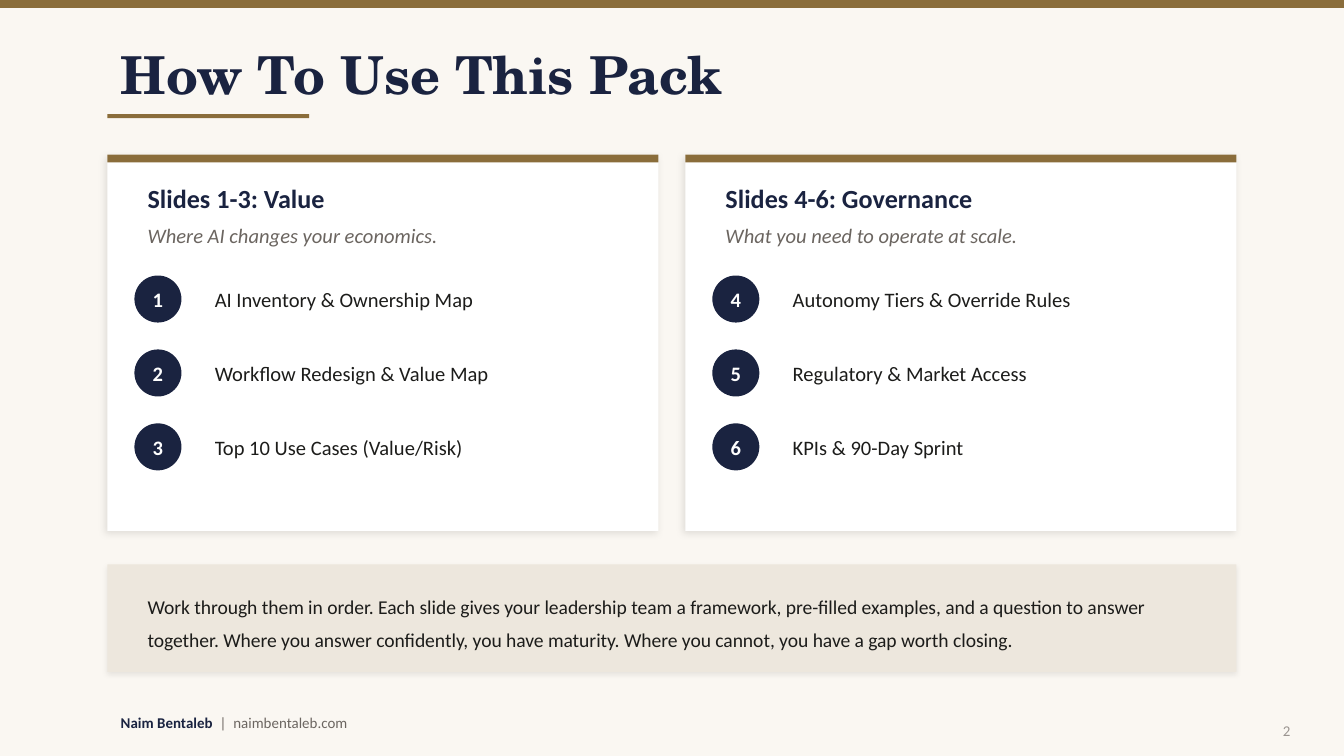
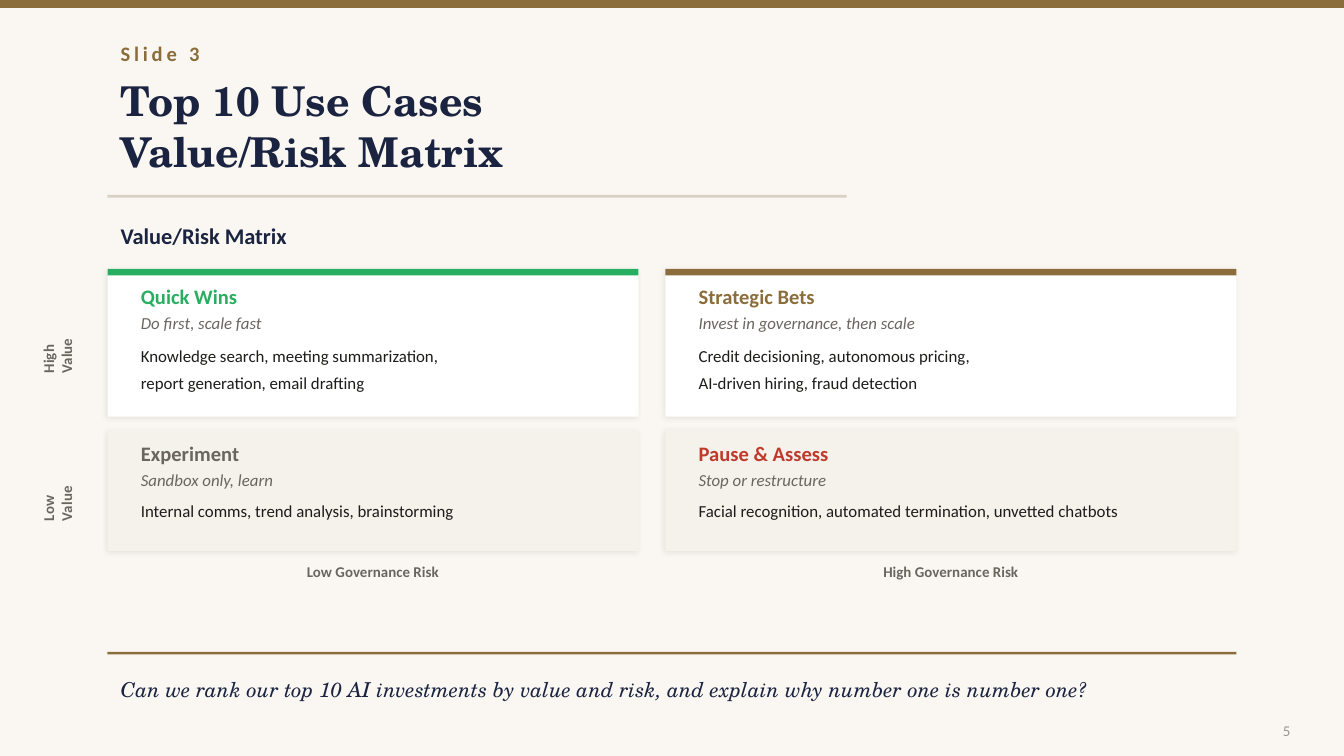
import dataclasses
import typing

import lxml.etree
import pptx
import pptx.dml.color
import pptx.enum.shapes
import pptx.enum.text
import pptx.oxml.ns
import pptx.util

Inches = pptx.util.Inches
SHAPES = pptx.enum.shapes.MSO_SHAPE
ALIGN = pptx.enum.text.PP_ALIGN
ANCHOR = pptx.enum.text.MSO_ANCHOR

COLORS = {
    "paper": "FAF7F2",
    "gold": "8A6D3B",
    "navy": "1A2340",
    "white": "FFFFFF",
    "ink": "1C1C1A",
    "gray": "6B6560",
    "pale_gray": "9A9490",
    "rule": "D8D0C4",
    "sand": "EDE7DD",
    "cream": "F5F1EB",
    "green": "27AE60",
    "red": "C0392B",
    "black": "000000",
}
SANS, SERIF = "Calibri", "TeX Gyre Schola"
MARGIN, CONTENT_WIDTH, GUTTER = 0.8, 8.4, 0.2


class Frame(typing.NamedTuple):
    left: float
    top: float
    width: float
    height: float

    def lengths(self) -> list:
        return [Inches(value) for value in self]


class Shadow(typing.NamedTuple):
    opacity: int
    blur: int
    distance: int


DEEP_SHADOW = Shadow(10, 4, 2)
SOFT_SHADOW = Shadow(8, 3, 1)


@dataclasses.dataclass
class Section:
    title: str
    subtitle: str
    first_number: int
    topics: list[str]


@dataclasses.dataclass
class Quadrant:
    title: str
    subtitle: str
    examples: str
    color: str
    column: int
    row: int


class MatrixColumn(typing.NamedTuple):
    left: float
    width: float
    label: str


class MatrixRow(typing.NamedTuple):
    top: float
    height: float
    fill: str
    has_band: bool
    title_offset: float
    subtitle_offset: float
    examples_offset: float
    examples_height: float
    line_spacing: float | None
    label: str
    label_top: float


SECTIONS = [
    Section("Slides 1-3: Value", "Where AI changes your economics.", 1,
            ["AI Inventory & Ownership Map", "Workflow Redesign & Value Map",
             "Top 10 Use Cases (Value/Risk)"]),
    Section("Slides 4-6: Governance", "What you need to operate at scale.", 4,
            ["Autonomy Tiers & Override Rules", "Regulatory & Market Access",
             "KPIs & 90-Day Sprint"]),
]
MATRIX_COLUMNS = [
    MatrixColumn(MARGIN, 3.95, "Low Governance Risk"),
    MatrixColumn(4.95, 4.25, "High Governance Risk"),
]
MATRIX_ROWS = [
    MatrixRow(2, 1.1, "white", True, 0.08, 0.3, 0.5, 0.45, 1.3, "High Value", 2.25),
    MatrixRow(3.2, 0.9, "cream", False, 0.05, 0.27, 0.45, 0.3, None, "Low Value", 3.35),
]
QUADRANTS = [
    Quadrant("Quick Wins", "Do first, scale fast",
             "Knowledge search, meeting summarization,\nreport generation, email drafting",
             "green", 0, 0),
    Quadrant("Strategic Bets", "Invest in governance, then scale",
             "Credit decisioning, autonomous pricing,\nAI-driven hiring, fraud detection",
             "gold", 1, 0),
    Quadrant("Experiment", "Sandbox only, learn",
             "Internal comms, trend analysis, brainstorming", "gray", 0, 1),
    Quadrant("Pause & Assess", "Stop or restructure",
             "Facial recognition, automated termination, unvetted chatbots", "red", 1, 1),
]


# Drawing helpers
def rgb(color: str) -> pptx.dml.color.RGBColor:
    return pptx.dml.color.RGBColor.from_string(COLORS[color])


def add_span(paragraph, text: str, *, size: float = 11, color: str = "ink",
             font: str = SANS, bold: bool = False, italic: bool = False,
             tracking: float = 0) -> None:
    span = paragraph.add_run()
    span.text = text
    span.font.name = font
    span.font.size = pptx.util.Pt(size)
    span.font.bold = bold
    span.font.italic = italic
    span.font.color.rgb = rgb(color)
    if tracking:
        span._r.get_or_add_rPr().set("spc", str(int(tracking * 100)))


def fill_text(box, text: str, *, align=ALIGN.LEFT, anchor=ANCHOR.MIDDLE,
              line_spacing: float | None = None, **style) -> None:
    text_frame = box.text_frame
    text_frame.word_wrap = True
    text_frame.vertical_anchor = anchor
    for index, line in enumerate(text.split("\n")):
        paragraph = text_frame.add_paragraph() if index else text_frame.paragraphs[0]
        paragraph.alignment = align
        if line_spacing:
            paragraph.line_spacing = line_spacing
        add_span(paragraph, line, **style)


def add_text(page, frame: Frame, text: str, *, rotation: float = 0, **style):
    box = page.shapes.add_textbox(*frame.lengths())
    box.rotation = rotation
    fill_text(box, text, **style)
    return box


def add_block(page, frame: Frame, color: str, *, kind=SHAPES.RECTANGLE,
              shadow: Shadow | None = None):
    block = page.shapes.add_shape(kind, *frame.lengths())
    block.fill.solid()
    block.fill.fore_color.rgb = rgb(color)
    block.line.fill.background()
    block.shadow.inherit = False
    if shadow:
        qn = pptx.oxml.ns.qn
        effects = block._element.spPr.find(qn("a:effectLst"))
        outer = lxml.etree.SubElement(
            effects, qn("a:outerShdw"), blurRad=str(pptx.util.Pt(shadow.blur)),
            dist=str(pptx.util.Pt(shadow.distance)), dir=str(135 * 60000),
            algn="bl", rotWithShape="0")
        tint = lxml.etree.SubElement(outer, qn("a:srgbClr"), val=COLORS["black"])
        lxml.etree.SubElement(tint, qn("a:alpha"), val=str(shadow.opacity * 1000))
    return block


def add_page(deck, number: int):
    page = deck.slides.add_slide(deck.slide_layouts[6])
    page.background.fill.solid()
    page.background.fill.fore_color.rgb = rgb("paper")
    add_block(page, Frame(0, 0, 10, 0.06), "gold")
    add_text(page, Frame(9.2, 5.25, 0.5, 0.3), str(number), size=8,
             color="pale_gray", align=ALIGN.RIGHT, anchor=ANCHOR.BOTTOM)
    return page


def add_title(page, frame: Frame, text: str, **style) -> None:
    add_text(page, frame, text, font=SERIF, color="navy", bold=True, **style)


# Section cards with numbered topics
def add_section(page, section: Section, left: float, width: float) -> None:
    top, inner = 1.15, left + 0.2
    add_block(page, Frame(left, top, width, 2.8), "white", shadow=DEEP_SHADOW)
    add_block(page, Frame(left, top, width, 0.06), "gold")
    add_text(page, Frame(inner, 1.3, width - 0.4, 0.35), section.title,
             size=14, color="navy", bold=True)
    add_text(page, Frame(inner, 1.6, width - 0.4, 0.3), section.subtitle,
             color="gray", italic=True)
    for index, topic in enumerate(section.topics):
        topic_top = 2.05 + index * 0.55
        badge = add_block(page, Frame(inner, topic_top, 0.35, 0.35), "navy",
                          kind=SHAPES.OVAL)
        badge_text = badge.text_frame
        badge_text.margin_left = badge_text.margin_right = 0
        badge_text.margin_top = badge_text.margin_bottom = 0
        fill_text(badge, str(section.first_number + index), color="white",
                  bold=True, align=ALIGN.CENTER)
        add_text(page, Frame(inner + 0.5, topic_top, 3.2, 0.35), topic)


# Matrix quadrants
def add_quadrant(page, quadrant: Quadrant) -> None:
    column, row = MATRIX_COLUMNS[quadrant.column], MATRIX_ROWS[quadrant.row]
    add_block(page, Frame(column.left, row.top, column.width, row.height),
              row.fill, shadow=SOFT_SHADOW)
    if row.has_band:
        add_block(page, Frame(column.left, row.top, column.width, 0.05), quadrant.color)
    left, width = column.left + 0.15, column.width - 0.35
    add_text(page, Frame(left, row.top + row.title_offset, 2.5, 0.25),
             quadrant.title, color=quadrant.color, bold=True)
    add_text(page, Frame(left, row.top + row.subtitle_offset, width, 0.2),
             quadrant.subtitle, size=9, color="gray", italic=True)
    add_text(page, Frame(left, row.top + row.examples_offset, width, row.examples_height),
             quadrant.examples, size=9, line_spacing=row.line_spacing)


def build_guide(deck) -> None:
    page = add_page(deck, 2)
    add_title(page, Frame(MARGIN, 0.25, 8, 0.6), "How To Use This Pack", size=28)
    add_block(page, Frame(MARGIN, 0.85, 1.5, 0.03), "gold")

    card_width = (CONTENT_WIDTH - GUTTER) / 2
    for index, section in enumerate(SECTIONS):
        add_section(page, section, MARGIN + index * (card_width + GUTTER), card_width)

    # Advice panel
    add_block(page, Frame(MARGIN, 4.2, CONTENT_WIDTH, 0.8), "sand", shadow=SOFT_SHADOW)
    add_text(page, Frame(1, 4.25, 8, 0.7),
             "Work through them in order. Each slide gives your leadership team a "
             "framework, pre-filled examples, and a question to answer together. "
             "Where you answer confidently, you have maturity. Where you cannot, "
             "you have a gap worth closing.", size=10.5, line_spacing=1.4)

    # Author line
    author = add_text(page, Frame(MARGIN, 5.25, 4, 0.25), "Naim Bentaleb",
                      size=8, color="navy", bold=True)
    add_span(author.text_frame.paragraphs[0], "  |  naimbentaleb.com",
             size=8, color="gray")


def build_matrix(deck) -> None:
    page = add_page(deck, 5)
    add_text(page, Frame(MARGIN, 0.25, 4, 0.3), "Slide 3", color="gold",
             bold=True, tracking=2)
    add_title(page, Frame(MARGIN, 0.5, 5.5, 0.85),
              "Top 10 Use Cases\nValue/Risk Matrix", size=22, line_spacing=1.05)
    add_block(page, Frame(MARGIN, 1.45, 5.5, 0.02), "rule")
    add_text(page, Frame(MARGIN, 1.6, 4, 0.3), "Value/Risk Matrix", size=12,
             color="navy", bold=True)

    for quadrant in QUADRANTS:
        add_quadrant(page, quadrant)

    # Axis labels
    for row in MATRIX_ROWS:
        add_text(page, Frame(0.1, row.label_top, 0.65, 0.6), row.label,
                 rotation=270, size=8, color="gray", bold=True)
    for column in MATRIX_COLUMNS:
        add_text(page, Frame(column.left, 4.15, column.width, 0.2), column.label,
                 size=8, color="gray", bold=True, align=ALIGN.CENTER)

    # Closing question
    add_block(page, Frame(MARGIN, 4.85, CONTENT_WIDTH, 0.02), "gold")
    add_text(page, Frame(MARGIN, 4.95, CONTENT_WIDTH, 0.35),
             "Can we rank our top 10 AI investments by value and risk, "
             "and explain why number one is number one?",
             font=SERIF, color="navy", italic=True)


def main() -> None:
    deck = pptx.Presentation()
    deck.slide_width = Inches(10)
    deck.slide_height = Inches(10) * 9 // 16
    build_guide(deck)
    build_matrix(deck)
    deck.save("out.pptx")


if __name__ == "__main__":
    main()
